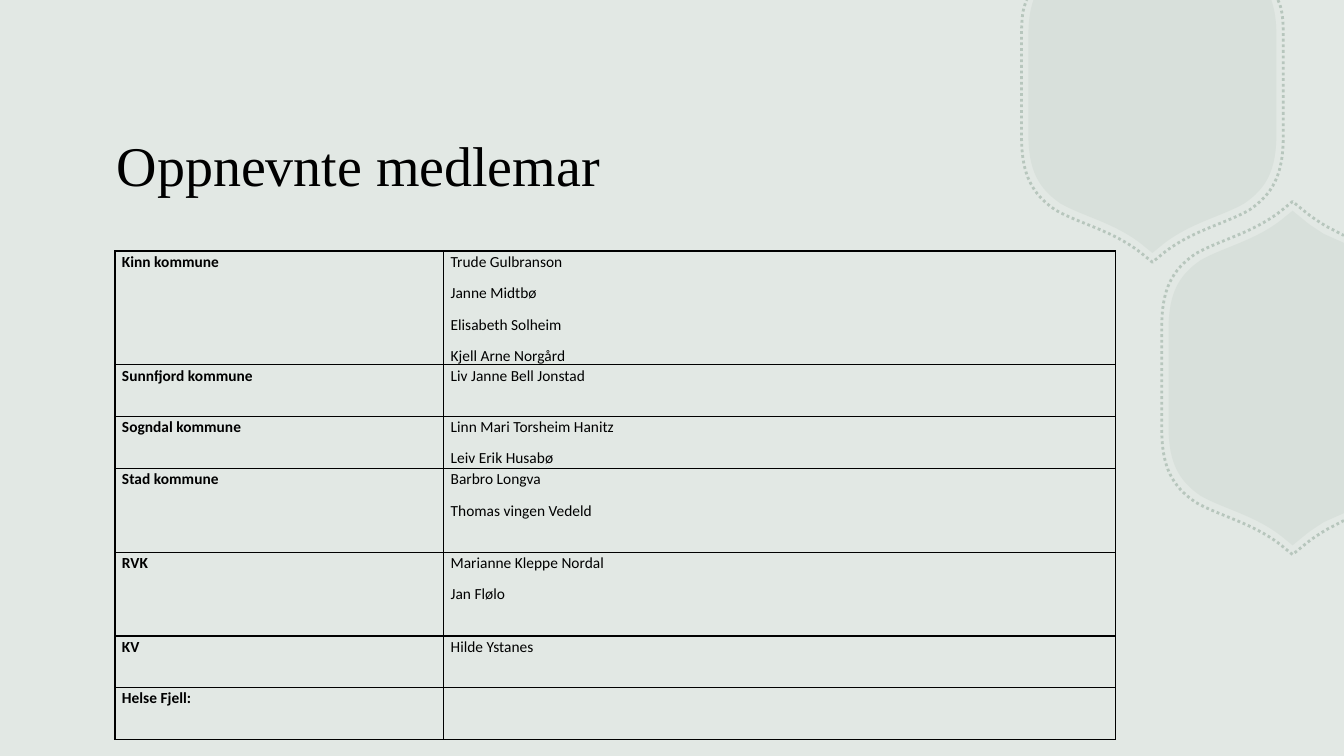
from dataclasses import dataclass

from lxml.etree import SubElement
from pptx import Presentation
from pptx.dml.color import RGBColor
from pptx.enum.dml import MSO_LINE
from pptx.enum.text import MSO_ANCHOR, PP_ALIGN
from pptx.oxml.ns import qn
from pptx.util import Inches, Pt

Point = tuple[float, float]
Piece = tuple[Point, ...]  # one corner, or the four points of a Bezier curve

COLORS = {"background": "E2E8E4", "shield": "A2B5A9", "ink": "000000"}
SLIDE_WIDTH, SLIDE_HEIGHT = 13.33, 7.5
COLUMN_WIDTHS = (3.26, 6.66)
DOTTED_SCALE = 1.055

# Pieces of the shield outline, measured from the shield's centre
TOP_CUT = ((1.18, -0.85), (1.22, -0.73), (1.23, -0.62), (1.23, -0.49))
SIDE = ((1.23, 0.48), (1.23, 0.84), (1.13, 1.02), (0.91, 1.17))
SHOULDER = ((0.91, 1.17), (0.68, 1.30), (0.38, 1.36), (0.11, 1.57))
TIP = ((0.0, 1.66),)
RIGHT_CUT = ((0.51, 1.34),)
SHORT_SHOULDER = ((0.31, 1.43), (0.25, 1.47), (0.18, 1.51), (0.11, 1.57))


def mirrored(pieces: list[Piece], flip_x: int, flip_y: int) -> list[Piece]:
    """Mirror an outline and reverse its direction."""
    return [tuple((x * flip_x, y * flip_y) for x, y in piece[::-1]) for piece in pieces[::-1]]


RIGHT_HALF = [TOP_CUT, SIDE, SHOULDER]
UPPER_OUTLINE = RIGHT_HALF + [TIP] + mirrored(RIGHT_HALF, -1, 1)
BOTTOM_HALF = [RIGHT_CUT, SHORT_SHOULDER, TIP] + mirrored([SIDE, SHOULDER], -1, 1)
LOWER_OUTLINE = BOTTOM_HALF + mirrored(BOTTOM_HALF, 1, -1)


@dataclass
class Shield:
    center_x: float
    center_y: float
    outline: list[Piece]


@dataclass
class MemberRow:
    organisation: str
    members: list[str]
    height: float


SHIELDS = [Shield(11.43, 0.85, UPPER_OUTLINE), Shield(12.82, 3.75, LOWER_OUTLINE)]

MEMBER_ROWS = [
    MemberRow("Kinn kommune", ["Trude Gulbranson", "Janne Midtbø",
                               "Elisabeth Solheim", "Kjell Arne Norgård"], 1.13),
    MemberRow("Sunnfjord kommune", ["Liv Janne Bell Jonstad"], 0.51),
    MemberRow("Sogndal kommune", ["Linn Mari Torsheim Hanitz", "Leiv Erik Husabø"], 0.52),
    MemberRow("Stad kommune", ["Barbro Longva", "Thomas vingen Vedeld"], 0.83),
    MemberRow("RVK", ["Marianne Kleppe Nordal", "Jan Flølo"], 0.83),
    MemberRow("KV", ["Hilde Ystanes"], 0.51),
    MemberRow("Helse Fjell:", [], 0.52),
]


def color(name: str) -> RGBColor:
    return RGBColor.from_string(COLORS[name])


def set_opacity(shape, percent: int) -> None:
    for color_element in shape.element.iter(qn("a:srgbClr")):
        SubElement(color_element, qn("a:alpha"), val=str(percent * 1000))


def bend_outline(shape, outline: list[Piece]) -> None:
    """Join the three line segments of every four-point piece into one curve."""
    outline_path = next(shape.element.iter(qn("a:path")))
    commands = iter(list(outline_path)[:sum(len(piece) for piece in outline)])
    for piece in outline:
        next(commands)
        if len(piece) == 4:
            curve = next(commands)
            curve.tag = qn("a:cubicBezTo")
            for _ in range(2):
                line = next(commands)
                curve.append(line[0])
                outline_path.remove(line)


def draw_shield(slide, shield: Shield, dotted: bool) -> None:
    scale = DOTTED_SCALE if dotted else 1
    points = [(Inches(min(shield.center_x + x * scale, SLIDE_WIDTH)),
               Inches(max(shield.center_y + y * scale, 0)))
              for piece in shield.outline for x, y in piece]
    builder = slide.shapes.build_freeform(*points[0], scale=1.0)
    builder.add_line_segments(points[1:], close=not dotted)
    shape = builder.convert_to_shape()
    bend_outline(shape, shield.outline)
    shape.shadow.inherit = False
    if dotted:
        shape.fill.background()
        shape.line.color.rgb = color("shield")
        shape.line.width = Pt(2)
        shape.line.dash_style = MSO_LINE.ROUND_DOT
        set_opacity(shape, 65)
    else:
        shape.fill.solid()
        shape.fill.fore_color.rgb = color("shield")
        set_opacity(shape, 15)
        shape.line.fill.background()


def format_font(font, name: str, size: float, bold: bool = False) -> None:
    font.name = name
    font.size = Pt(size)
    font.bold = bold
    font.color.rgb = color("ink")


def draw_title(slide, text: str) -> None:
    shape = slide.shapes.add_textbox(Inches(1.06), Inches(1.05), Inches(9.93), Inches(1.16))
    text_frame = shape.text_frame
    text_frame.word_wrap = True
    text_frame.vertical_anchor = MSO_ANCHOR.MIDDLE
    text_frame.text = text
    format_font(text_frame.paragraphs[0].runs[0].font, "Times New Roman", 40)


def add_borders(cell) -> None:
    properties = cell._tc.get_or_add_tcPr()
    for side in ("a:lnL", "a:lnR", "a:lnT", "a:lnB"):
        border = SubElement(properties, qn(side), w=str(Pt(1)))
        fill = SubElement(border, qn("a:solidFill"))
        SubElement(fill, qn("a:srgbClr"), val=COLORS["ink"])


def fill_cell(cell, lines: list[str], bold: bool) -> None:
    add_borders(cell)
    cell.fill.background()
    cell.margin_left = cell.margin_right = Inches(0.07)
    cell.margin_top = cell.margin_bottom = 0
    cell.text_frame.text = "\n".join(lines)
    for paragraph in cell.text_frame.paragraphs:
        paragraph.alignment = PP_ALIGN.LEFT
        paragraph.line_spacing = 1.07
        paragraph.space_after = Pt(8)
        for run in paragraph.runs:
            format_font(run.font, "Calibri", 11, bold)


def draw_member_table(slide, rows: list[MemberRow]) -> None:
    frame = slide.shapes.add_table(
        len(rows), len(COLUMN_WIDTHS), Inches(1.14), Inches(2.49),
        Inches(sum(COLUMN_WIDTHS)), Inches(sum(row.height for row in rows)))
    table = frame.table
    table.first_row = table.horz_banding = False
    for column, width in zip(table.columns, COLUMN_WIDTHS):
        column.width = Inches(width)
    for index, row in enumerate(rows):
        table.rows[index].height = Inches(row.height)
        fill_cell(table.cell(index, 0), [row.organisation], bold=True)
        fill_cell(table.cell(index, 1), row.members, bold=False)


def main() -> None:
    presentation = Presentation()
    presentation.slide_width = Inches(SLIDE_WIDTH)
    presentation.slide_height = Inches(SLIDE_HEIGHT)
    slide = presentation.slides.add_slide(presentation.slide_layouts[6])

    # Background and decoration
    slide.background.fill.solid()
    slide.background.fill.fore_color.rgb = color("background")
    for dotted in (False, True):
        for shield in SHIELDS:
            draw_shield(slide, shield, dotted)

    # Content
    draw_title(slide, "Oppnevnte medlemar")
    draw_member_table(slide, MEMBER_ROWS)

    presentation.save("out.pptx")


if __name__ == "__main__":
    main()
